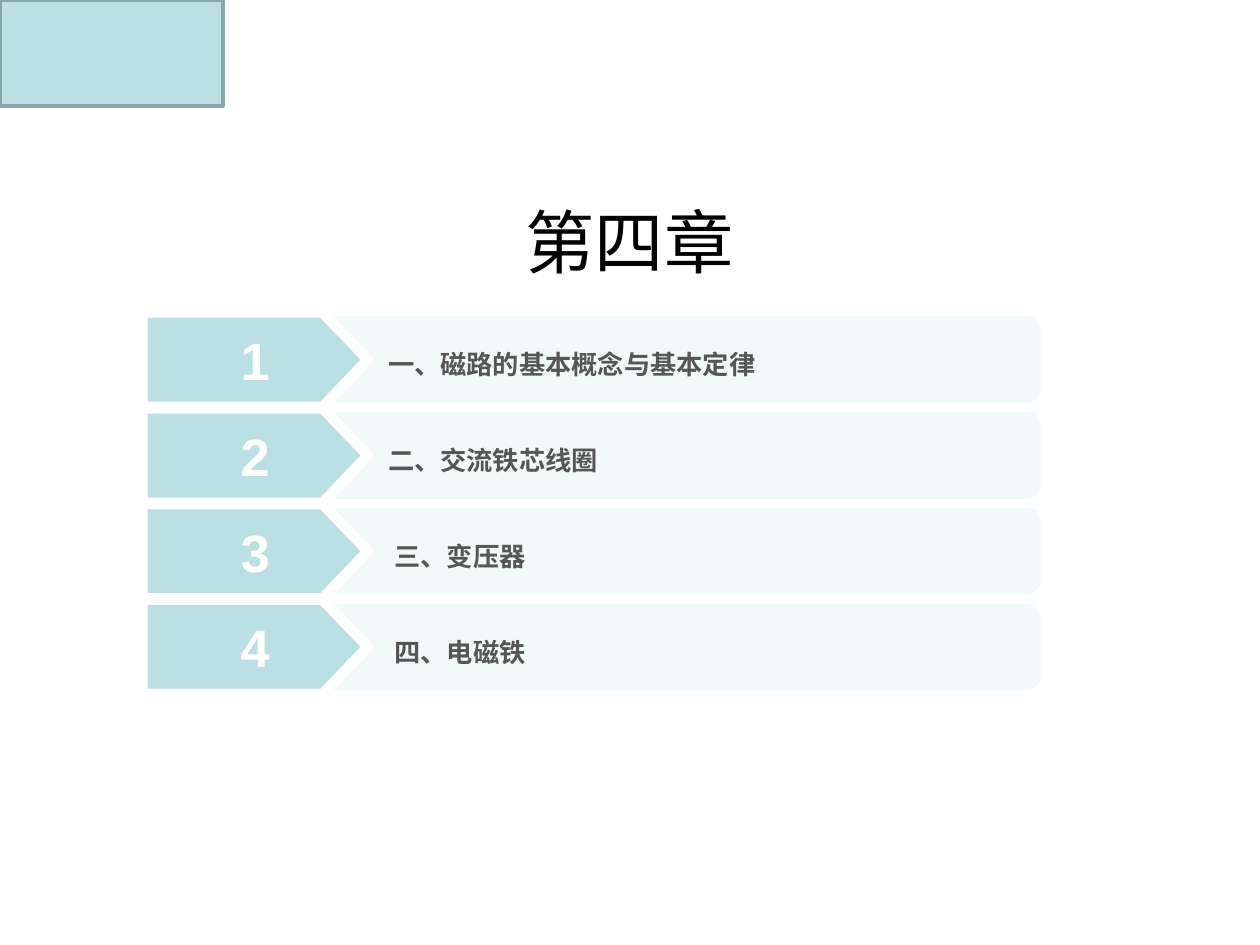
import math
import pptx
import pptx.dml.color
import pptx.enum.shapes
import pptx.enum.text
import pptx.oxml.ns
import pptx.util
from lxml import etree

Inches = pptx.util.Inches
Pt = pptx.util.Pt
SHAPE = pptx.enum.shapes.MSO_SHAPE
ALIGN = pptx.enum.text.PP_ALIGN
ANCHOR = pptx.enum.text.MSO_ANCHOR

TOPICS = [
    ("一、磁路的基本概念与基本定律", 0.48),
    ("二、交流铁芯线圈", 0.48),
    ("三、变压器", 0.53),
    ("四、电磁铁", 0.53),
]
ROW_TOP = 2.48
ROW_PITCH = 0.76


def rgb(value):
    return pptx.dml.color.RGBColor.from_string(value)


def write(sp, text, size, color, bold=False, align=ALIGN.LEFT,
          spacing=1.0, insets=(0.1, 0.05, 0.1, 0.05), font="Arial"):
    tf = sp.text_frame
    tf.word_wrap = True
    tf.vertical_anchor = ANCHOR.MIDDLE
    (tf.margin_left, tf.margin_top,
     tf.margin_right, tf.margin_bottom) = map(Inches, insets)
    p = tf.paragraphs[0]
    p.alignment = align
    p.line_spacing = spacing
    r = p.add_run()
    r.text = text
    r.font.name = font
    r.font.size = Pt(size)
    r.font.bold = bold
    r.font.color.rgb = rgb(color)


class Deck:
    accent = "BBE0E3"
    pale = "F1F9F9"
    border = "8AA6A8"
    ink = "565656"
    white = "FFFFFF"
    black = "000000"

    def __init__(self):
        self.prs = pptx.Presentation()
        self.prs.slide_width = Inches(10)
        self.prs.slide_height = Inches(7.5)
        self.s = self.prs.slides.add_slide(self.prs.slide_layouts[6])

    def paint(self, sp, fill, line=None, width=0):
        sp.shadow.inherit = False
        sp.fill.solid()
        sp.fill.fore_color.rgb = rgb(fill)
        if line:
            sp.line.color.rgb = rgb(line)
            sp.line.width = Pt(width)
        else:
            sp.line.fill.background()

    def shape(self, kind, x, y, w, h, line, width):
        sp = self.s.shapes.add_shape(kind, Inches(x), Inches(y), Inches(w), Inches(h))
        self.paint(sp, self.accent, line, width)
        return sp

    def title(self, text, x, y, w, h):
        sp = self.s.shapes.add_textbox(Inches(x), Inches(y), Inches(w), Inches(h))
        write(sp, text, 39.6, self.black, align=ALIGN.CENTER)

    def bar(self, text, indent, x, y, w, h, radius=0.12, steps=8):
        points = [(x, y)]
        for cy, start in ((y + radius, -90), (y + h - radius, 0)):
            for i in range(steps + 1):
                angle = math.radians(start + 90 * i / steps)
                points.append((x + w - radius + radius * math.cos(angle),
                               cy + radius * math.sin(angle)))
        points.append((x, y + h))
        outline = [(Inches(px), Inches(py)) for px, py in points]
        builder = self.s.shapes.build_freeform(*outline[0])
        builder.add_line_segments(outline[1:], close=True)
        sp = builder.convert_to_shape()
        self.paint(sp, self.pale)
        qn = pptx.oxml.ns.qn
        color = sp.fill._xPr.find(qn("a:solidFill")).find(qn("a:srgbClr"))
        etree.SubElement(color, qn("a:alpha")).set("val", "90000")
        write(sp, text, 15, self.ink, bold=True, spacing=1.3,
              insets=(indent, 0, 0, 0))

    def arrow(self, number, x, y, w, h):
        sp = self.shape(SHAPE.PENTAGON, x, y, w, h, self.white, 6)
        sp.adjustments[0] = 0.48
        write(sp, str(number), 30, self.white, bold=True, align=ALIGN.CENTER,
              insets=(0.28, 0.05, 0.1, 0.05))


def main():
    deck = Deck()
    deck.shape(SHAPE.RECTANGLE, 0, 0, 1.77, 0.84, deck.border, 2)
    for i, (topic, indent) in enumerate(TOPICS):
        y = ROW_TOP + i * ROW_PITCH
        deck.bar(topic, indent, 2.6, y + 0.03, 5.66, 0.69)
        deck.arrow(i + 1, 1.13, y, 1.79, 0.75)
    deck.title("第四章", 2.04, 1.63, 5.91, 0.57)
    deck.prs.save("out.pptx")


if __name__ == "__main__":
    main()
